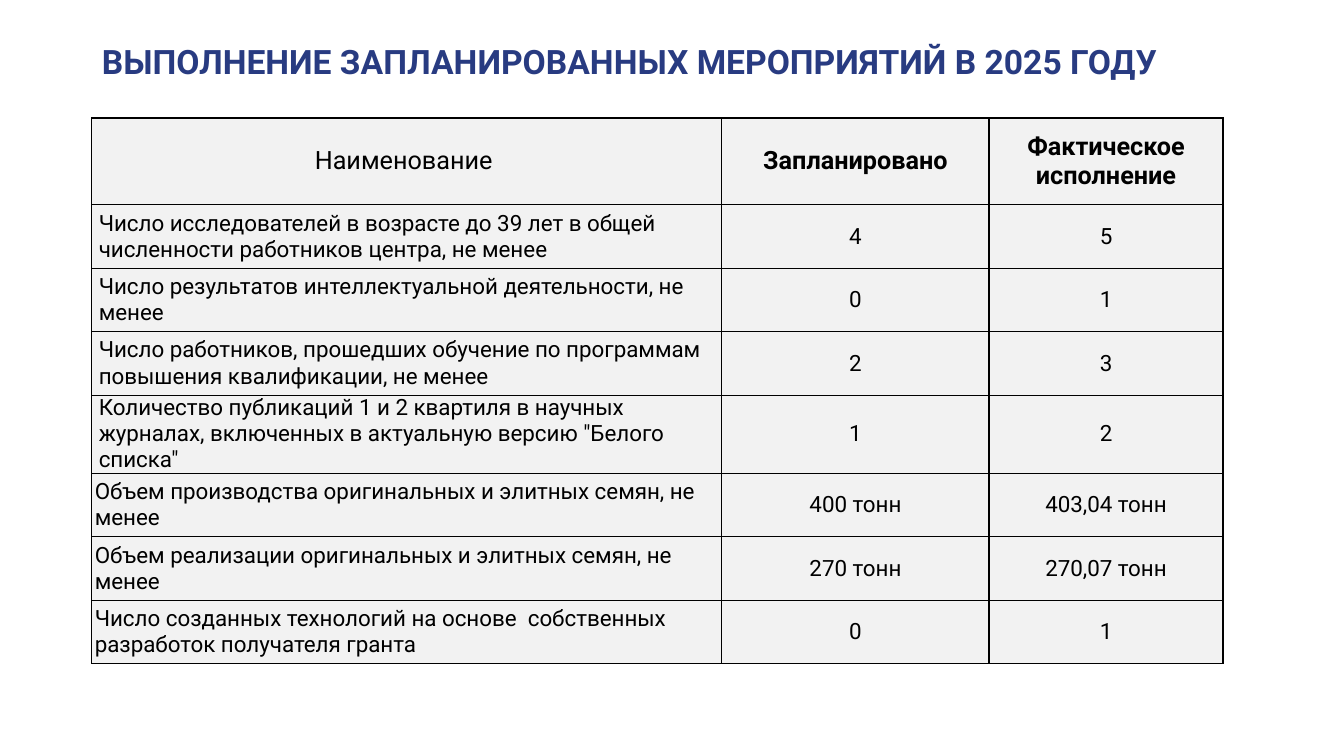
import pptx
import pptx.util
import pptx.dml.color
import pptx.enum.text
import lxml.etree
from dataclasses import dataclass

TITLE = "ВЫПОЛНЕНИЕ ЗАПЛАНИРОВАННЫХ МЕРОПРИЯТИЙ В 2025 ГОДУ"
HEAD = ("Наименование ", "Запланировано", "Фактическое исполнение")
STAFF = [
    ("Число исследователей в возрасте до 39 лет в общей численности работников центра, не менее", "4", "5"),
    ("Число результатов интеллектуальной деятельности, не менее", "0", "1"),
    ("Число работников, прошедших обучение по программам повышения квалификации, не менее", "2", "3"),
    ('Количество публикаций 1 и 2 квартиля в научных журналах, включенных в актуальную версию "Белого списка"', "1", "2"),
]
SEEDS = [
    ("Объем производства оригинальных и элитных семян, не менее", "400 тонн", "403,04 тонн"),
    ("Объем реализации оригинальных и элитных семян, не менее", "270 тонн", "270,07 тонн"),
    ("Число созданных технологий на основе  собственных разработок получателя гранта", "0", "1"),
]
ROWS = [HEAD, *STAFF, *SEEDS]
WIDE, HIGH = 13.33, 7.5
LEFT, TOP = 0.91, 1.17
COLS = (6.25, 2.65, 2.32)
TALL, ROW = 0.86, 0.63
PAD, SLIM = 0.07, 0.03


@dataclass
class Theme:
    face: str = "Roboto"
    blue: str = "283B81"
    ink: str = "000000"
    fill: str = "F2F2F2"
    title: int = 24
    head: int = 18
    body: int = 16
    line: int = 1


LOOK = Theme()
ALIGN = pptx.enum.text.PP_ALIGN
MIDDLE = pptx.enum.text.MSO_ANCHOR.MIDDLE
inch = pptx.util.Inches


def style(para, size, color, bold, align):
    para.alignment = align
    font = para.font
    font.name = LOOK.face
    font.size = pptx.util.Pt(size)
    font.bold = bold
    font.color.rgb = pptx.dml.color.RGBColor.from_string(color)


def border(cell):
    props = cell._tc.get_or_add_tcPr()
    space = props.nsmap["a"]
    for at, side in enumerate(("lnL", "lnR", "lnT", "lnB")):
        line = lxml.etree.Element(f"{{{space}}}{side}", w=str(pptx.util.Pt(LOOK.line)))
        solid = lxml.etree.SubElement(line, f"{{{space}}}solidFill")
        lxml.etree.SubElement(solid, f"{{{space}}}srgbClr", val=LOOK.ink)
        props.insert(at, line)


def put_title(slide):
    title = slide.shapes.title
    title.left, title.top = inch(LEFT), inch(0.3)
    title.width, title.height = inch(11.5), inch(0.61)
    frame = title.text_frame
    frame.text = TITLE
    frame.word_wrap = True
    frame.auto_size = pptx.enum.text.MSO_AUTO_SIZE.NONE
    frame.vertical_anchor = MIDDLE
    style(frame.paragraphs[0], LOOK.title, LOOK.blue, True, ALIGN.LEFT)


def put_cell(cell, text, row, col):
    cell.text = text
    cell.vertical_anchor = MIDDLE
    cell.fill.solid()
    cell.fill.fore_color.rgb = pptx.dml.color.RGBColor.from_string(LOOK.fill)
    border(cell)
    top = row == 0
    if not top:
        slim = col == 0 and row > len(STAFF)
        cell.margin_left = cell.margin_right = inch(SLIM if slim else PAD)
        cell.margin_top = cell.margin_bottom = 0
    size = LOOK.head if top else LOOK.body
    align = ALIGN.CENTER if top or col else ALIGN.LEFT
    style(cell.text_frame.paragraphs[0], size, LOOK.ink, top and col > 0, align)


def put_table(slide):
    highs = [TALL] + [ROW] * (len(ROWS) - 1)
    frame = slide.shapes.add_table(
        len(ROWS), len(COLS), inch(LEFT), inch(TOP), inch(sum(COLS)), inch(sum(highs)))
    table = frame.table
    for col, width in enumerate(COLS):
        table.columns[col].width = inch(width)
    for row, (high, texts) in enumerate(zip(highs, ROWS)):
        table.rows[row].height = inch(high)
        for col, text in enumerate(texts):
            put_cell(table.cell(row, col), text, row, col)


def main():
    deck = pptx.Presentation()
    deck.slide_width, deck.slide_height = inch(WIDE), inch(HIGH)
    slide = deck.slides.add_slide(deck.slide_layouts[5])
    put_title(slide)
    put_table(slide)
    deck.save("out.pptx")


if __name__ == "__main__":
    main()
